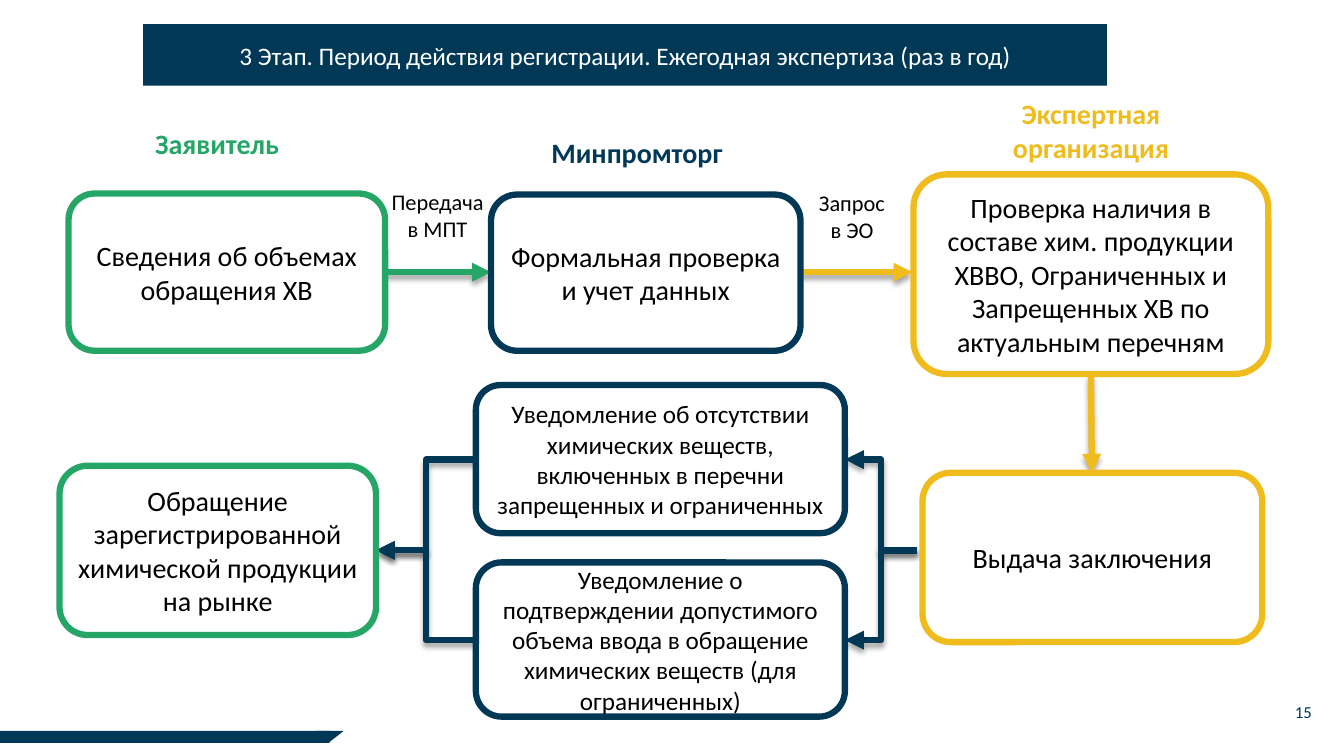
from lxml import etree
from pptx import Presentation
from pptx.dml.color import RGBColor
from pptx.enum.shapes import MSO_CONNECTOR as CONNECTOR, MSO_SHAPE as SHAPE
from pptx.enum.text import MSO_ANCHOR as ANCHOR, PP_ALIGN as ALIGN
from pptx.oxml import parse_xml
from pptx.oxml.ns import nsdecls, qn
from pptx.util import Inches, Pt

NAVY, GREEN, YELLOW = "013856", "25A666", "F0BC1D"
BLACK, WHITE = "000000", "FFFFFF"
SHADOW = (
    f'<a:effectLst {nsdecls("a")}>'
    f'<a:outerShdw blurRad="{Pt(4)}" dist="{Pt(3)}" dir="5400000" rotWithShape="0">'
    '<a:srgbClr val="000000"><a:alpha val="35000"/></a:srgbClr>'
    '</a:outerShdw></a:effectLst>'
)


def color(value):
    return RGBColor.from_string(value)


def write_text(shape, lines, size, text_color, bold=False, align=ALIGN.CENTER):
    frame = shape.text_frame
    frame.word_wrap = True
    frame.text = "\n".join(lines)
    for paragraph in frame.paragraphs:
        paragraph.alignment = align
        paragraph.font.name = "Calibri"
        paragraph.font.size = Pt(size)
        paragraph.font.bold = bold
        paragraph.font.color.rgb = color(text_color)


presentation = Presentation()
presentation.slide_width = Inches(13.33)
presentation.slide_height = Inches(7.5)
slide = presentation.slides.add_slide(presentation.slide_layouts[6])

bars = [
    (SHAPE.ISOSCELES_TRIANGLE, 3.13, 7.25, 0.28, 0.11, 180),
    (SHAPE.RECTANGLE, 0, 7.25, 3.27, 0.12, 0),
    (SHAPE.RECTANGLE, 1.42, 0.24, 9.56, 0.61, 0),
]
for preset, left, top, width, height, rotation in bars:
    bar = slide.shapes.add_shape(preset, Inches(left), Inches(top), Inches(width), Inches(height))
    bar.rotation = rotation
    bar.shadow.inherit = False
    bar.fill.solid()
    bar.fill.fore_color.rgb = color(NAVY)
    bar.line.fill.background()
title = bar
title.text_frame.vertical_anchor = ANCHOR.MIDDLE
write_text(title, ["3 Этап. Период действия регистрации. Ежегодная экспертиза (раз в год)"], 18, WHITE)

labels = [
    (11.94, 6.91, 1.17, 0.4, ["15"], 12, NAVY, False, ALIGN.RIGHT),
    (1.44, 1.21, 1.61, 0.44, ["Заявитель"], 20, GREEN, True, ALIGN.LEFT),
    (5.37, 1.3, 2.08, 0.44, ["Минпромторг"], 20, NAVY, True, ALIGN.LEFT),
    (9.3, 0.91, 3.04, 0.77, ["Экспертная", "организация"], 20, YELLOW, True, ALIGN.CENTER),
    (3.73, 1.82, 1.22, 0.64, ["Передача", "в МПТ"], 16, BLACK, False, ALIGN.CENTER),
    (8, 1.83, 0.9, 0.64, ["Запрос", "в ЭО"], 16, BLACK, False, ALIGN.CENTER),
]
for left, top, width, height, lines, size, text_color, bold, align in labels:
    label = slide.shapes.add_textbox(Inches(left), Inches(top), Inches(width), Inches(height))
    write_text(label, lines, size, text_color, bold, align)

arrows = [
    (CONNECTOR.STRAIGHT, 3.82, 2.7, 4.87, 2.7, GREEN),
    (CONNECTOR.STRAIGHT, 7.94, 2.7, 9.05, 2.7, YELLOW),
    (CONNECTOR.STRAIGHT, 10.82, 3.72, 10.83, 4.69, YELLOW),
    (CONNECTOR.ELBOW, 9.1, 5.46, 8.38, 4.56, NAVY),
    (CONNECTOR.ELBOW, 9.1, 5.46, 8.38, 6.35, NAVY),
    (CONNECTOR.ELBOW, 4.72, 4.56, 3.73, 5.46, NAVY),
    (CONNECTOR.ELBOW, 4.72, 6.35, 3.73, 5.46, NAVY),
]
for kind, start_x, start_y, end_x, end_y, line_color in arrows:
    arrow = slide.shapes.add_connector(
        kind, Inches(start_x), Inches(start_y), Inches(end_x), Inches(end_y))
    arrow.line.color.rgb = color(line_color)
    arrow.line.width = Pt(4.5)
    etree.SubElement(arrow.line._get_or_add_ln(), qn("a:tailEnd"), type="triangle")
    arrow._element.spPr.append(parse_xml(SHADOW))

steps = [
    (0.68, 1.92, 3.14, 1.56, GREEN, 20, ["Сведения об объемах обращения ХВ"]),
    (4.87, 1.93, 3.07, 1.55, NAVY, 20, ["Формальная проверка и учет данных"]),
    (9.06, 1.73, 3.52, 1.98, YELLOW, 20, [
        "Проверка наличия в составе хим. продукции ХВВО, Ограниченных и",
        "Запрещенных ХВ по актуальным перечням"]),
    (9.15, 4.69, 3.37, 1.68, YELLOW, 20, ["Выдача заключения"]),
    (4.72, 3.82, 3.66, 1.47, NAVY, 18, [
        "Уведомление об отсутствии химических веществ, "
        "включенных в перечни запрещенных и ограниченных"]),
    (4.72, 5.58, 3.66, 1.53, NAVY, 18, [
        "Уведомление о подтверждении допустимого объема ввода "
        "в обращение химических веществ (для ограниченных)"]),
    (0.59, 4.62, 3.14, 1.68, GREEN, 20, [
        "Обращение зарегистрированной химической продукции на рынке"]),
]
for left, top, width, height, line_color, size, lines in steps:
    step = slide.shapes.add_shape(
        SHAPE.ROUNDED_RECTANGLE, Inches(left), Inches(top), Inches(width), Inches(height))
    step.shadow.inherit = False
    step.fill.solid()
    step.fill.fore_color.rgb = color(WHITE)
    step.line.color.rgb = color(line_color)
    step.line.width = Pt(4.5)
    step.text_frame.vertical_anchor = ANCHOR.MIDDLE
    write_text(step, lines, size, BLACK)

presentation.save("out.pptx")
